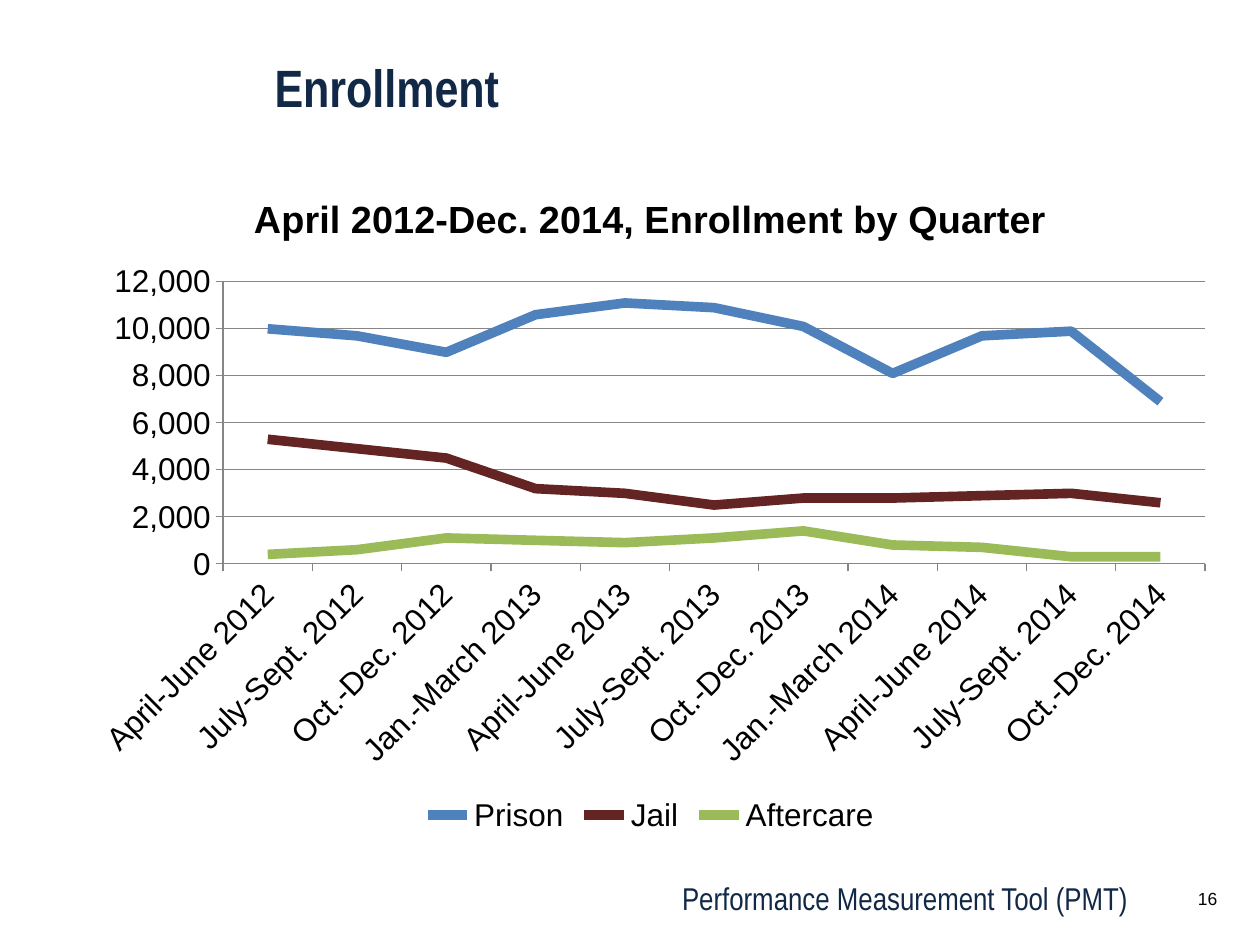
from dataclasses import dataclass

import pptx
import pptx.chart.data
import pptx.dml.color
import pptx.enum.chart
import pptx.enum.text
import pptx.oxml
import pptx.oxml.ns
import pptx.util

Cm = pptx.util.Cm
Pt = pptx.util.Pt
RGB = pptx.dml.color.RGBColor
ALIGN = pptx.enum.text.PP_ALIGN


@dataclass(frozen=True)
class Theme:
    navy: RGB = RGB(0x11, 0x29, 0x47)
    black: RGB = RGB(0, 0, 0)
    axis: RGB = RGB(0x86, 0x86, 0x86)
    heading_font: str = "Arial Narrow"
    body_font: str = "Arial"
    title_size: float = 30
    chart_title_size: float = 21.6
    body_size: float = 18
    number_size: float = 10
    series_width: float = 5.5
    axis_width: float = 0.75


@dataclass(frozen=True)
class Box:
    left: float
    top: float
    width: float
    height: float

    def lengths(self) -> tuple:
        return Cm(self.left), Cm(self.top), Cm(self.width), Cm(self.height)


@dataclass(frozen=True)
class Label:
    text: str
    box: Box
    font: str
    size: float
    color: RGB
    wrap: bool


@dataclass(frozen=True)
class Series:
    name: str
    values: tuple
    color: RGB


THEME = Theme()

LABELS = (
    Label("Performance Measurement Tool (PMT)", Box(10.59, 17.6, 12.4, 1.02),
          THEME.heading_font, THEME.body_size, THEME.navy, True),
    Label("16", Box(23.85, 17.78, 0.94, 0.69),
          THEME.body_font, THEME.number_size, THEME.black, False),
)

QUARTERS = (
    "April-June 2012", "July-Sept. 2012", "Oct.-Dec. 2012",
    "Jan.-March 2013", "April-June 2013", "July-Sept. 2013", "Oct.-Dec. 2013",
    "Jan.-March 2014", "April-June 2014", "July-Sept. 2014", "Oct.-Dec. 2014",
)

ENROLLMENT = (
    Series("Prison", (10000, 9700, 9000, 10600, 11100, 10900, 10100, 8100, 9700, 9900, 6900),
           RGB(0x4F, 0x81, 0xBD)),
    Series("Jail", (5300, 4900, 4500, 3200, 3000, 2500, 2800, 2800, 2900, 3000, 2600),
           RGB(0x63, 0x24, 0x23)),
    Series("Aftercare", (400, 600, 1100, 1000, 900, 1100, 1400, 800, 700, 300, 300),
           RGB(0x9B, 0xBB, 0x59)),
)


def style_font(font, name: str, size: float, color: RGB, bold: bool = False) -> None:
    font.name = name
    font.size = Pt(size)
    font.bold = bold
    font.color.rgb = color


def style_line(line, color: RGB, width: float) -> None:
    line.color.rgb = color
    line.width = Pt(width)


def draw_title(s, text: str, box: Box) -> None:
    sp = s.shapes.title
    sp.left, sp.top, sp.width, sp.height = box.lengths()
    tf = sp.text_frame
    tf.text = text
    tf.auto_size = pptx.enum.text.MSO_AUTO_SIZE.NONE
    tf.vertical_anchor = pptx.enum.text.MSO_ANCHOR.BOTTOM
    p = tf.paragraphs[0]
    p.alignment = ALIGN.LEFT
    p.line_spacing = Pt(31)
    style_font(p.runs[0].font, THEME.heading_font, THEME.title_size, THEME.navy, True)


def draw_label(s, label: Label) -> None:
    tf = s.shapes.add_textbox(*label.box.lengths()).text_frame
    tf.text = label.text
    tf.word_wrap = label.wrap
    tf.auto_size = pptx.enum.text.MSO_AUTO_SIZE.SHAPE_TO_FIT_TEXT
    p = tf.paragraphs[0]
    p.alignment = ALIGN.RIGHT
    style_font(p.runs[0].font, label.font, label.size, label.color)


def place_plot(chart, x: float, y: float, w: float, h: float) -> None:
    plot_area = chart.plots[0]._element.getparent()
    for old in plot_area.findall(pptx.oxml.ns.qn("c:layout")):
        plot_area.remove(old)
    sizes = "".join(f'<c:{tag} val="{value}"/>'
                    for tag, value in (("x", x), ("y", y), ("w", w), ("h", h)))
    plot_area.insert(0, pptx.oxml.parse_xml(
        f'<c:layout {pptx.oxml.ns.nsdecls("c")}><c:manualLayout>'
        '<c:layoutTarget val="inner"/><c:xMode val="edge"/><c:yMode val="edge"/>'
        f'{sizes}</c:manualLayout></c:layout>'))


def draw_chart(s, title: str, box: Box) -> None:
    data = pptx.chart.data.CategoryChartData(number_format="#,##0")
    data.categories = QUARTERS
    for series in ENROLLMENT:
        data.add_series(series.name, series.values)
    chart = s.shapes.add_chart(
        pptx.enum.chart.XL_CHART_TYPE.LINE, *box.lengths(), data).chart
    style_font(chart.font, THEME.body_font, THEME.body_size, THEME.black)

    chart.has_title = True
    tf = chart.chart_title.text_frame
    tf.text = title
    style_font(tf.paragraphs[0].runs[0].font, THEME.body_font,
               THEME.chart_title_size, THEME.black, True)
    chart.chart_title.include_in_layout = False

    chart.has_legend = True
    chart.legend.position = pptx.enum.chart.XL_LEGEND_POSITION.BOTTOM
    chart.legend.include_in_layout = False

    for axis in (chart.category_axis, chart.value_axis):
        axis.major_tick_mark = pptx.enum.chart.XL_TICK_MARK.OUTSIDE
        style_line(axis.format.line, THEME.axis, THEME.axis_width)
    chart.category_axis.tick_labels.font.size = Pt(THEME.body_size)
    body = chart.category_axis._element.txPr.find(pptx.oxml.ns.qn("a:bodyPr"))
    body.set("rot", str(-45 * 60000))
    value_axis = chart.value_axis
    value_axis.minimum_scale, value_axis.maximum_scale = 0, 12000
    value_axis.major_unit = 2000
    value_axis.has_major_gridlines = True
    style_line(value_axis.major_gridlines.format.line, THEME.axis, THEME.axis_width)
    value_axis.tick_labels.number_format = "#,##0"
    value_axis.tick_labels.number_format_is_linked = False

    plot = chart.plots[0]
    plot.vary_by_categories = False
    for drawn, series in zip(plot.series, ENROLLMENT):
        drawn.smooth = False
        drawn.marker.style = pptx.enum.chart.XL_MARKER_STYLE.NONE
        style_line(drawn.format.line, series.color, THEME.series_width)
    place_plot(chart, 0.13, 0.17, 0.85, 0.42)


def main() -> None:
    prs = pptx.Presentation()
    prs.slide_width, prs.slide_height = Cm(25.4), Cm(19.05)
    s = prs.slides.add_slide(prs.slide_layouts.get_by_name("Title Only"))
    draw_title(s, "Enrollment", Box(5.28, 1.24, 17.98, 1.27))
    for label in LABELS:
        draw_label(s, label)
    draw_chart(s, "April 2012-Dec. 2014, Enrollment by Quarter",
               Box(1.47, 3.38, 23.29, 13.54))
    prs.save("out.pptx")


if __name__ == "__main__":
    main()
